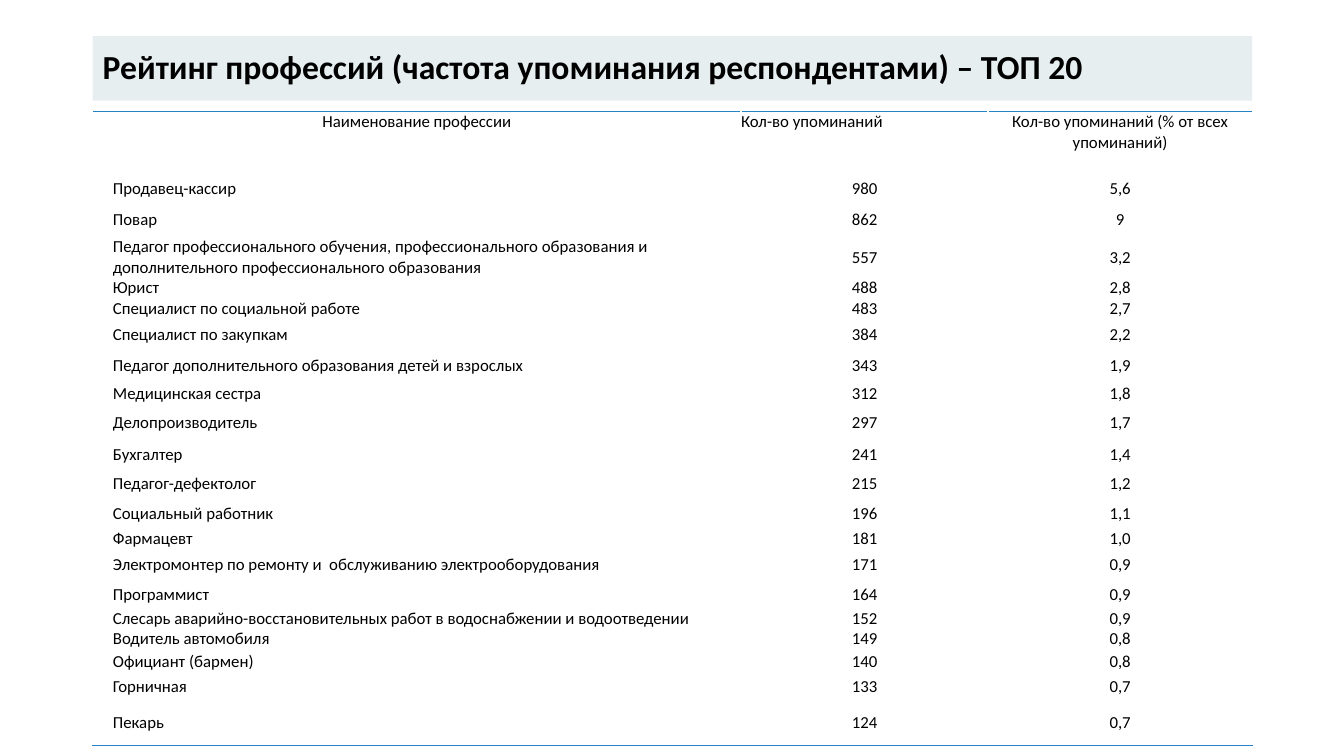
from lxml.etree import SubElement
from pptx import Presentation
from pptx.dml.color import RGBColor
from pptx.enum.shapes import MSO_SHAPE
from pptx.enum.text import MSO_ANCHOR, PP_ALIGN
from pptx.oxml.ns import qn
from pptx.util import Inches, Pt

HEADERS = ("Наименование профессии", "Кол-во упоминаний",
           "Кол-во упоминаний (% от всех упоминаний)")
HEADER_ALIGNS = (PP_ALIGN.CENTER, PP_ALIGN.LEFT, PP_ALIGN.CENTER)
BODY_ALIGNS = (PP_ALIGN.LEFT, PP_ALIGN.CENTER, PP_ALIGN.CENTER)
COL_WIDTHS = (6.43, 2.45, 2.62)
HEADER_HEIGHT = 0.61
PROFESSIONS = (
    ("Продавец-кассир", "980", "5,6", 0.3),
    ("Повар", "862", "9", 0.33),
    ("Педагог профессионального обучения, профессионального образования и "
     "дополнительного профессионального образования", "557", "3,2", 0.4),
    ("Юрист", "488", "2,8", 0.2),
    ("Специалист по социальной работе", "483", "2,7", 0.2),
    ("Специалист по закупкам", "384", "2,2", 0.32),
    ("Педагог дополнительного образования детей и взрослых", "343", "1,9", 0.29),
    ("Медицинская сестра", "312", "1,8", 0.26),
    ("Делопроизводитель", "297", "1,7", 0.33),
    ("Бухгалтер", "241", "1,4", 0.29),
    ("Педагог-дефектолог", "215", "1,2", 0.3),
    ("Социальный работник", "196", "1,1", 0.29),
    ("Фармацевт", "181", "1,0", 0.2),
    ("Электромонтер по ремонту и  обслуживанию электрооборудования", "171", "0,9", 0.32),
    ("Программист", "164", "0,9", 0.27),
    ("Слесарь аварийно-восстановительных работ в водоснабжении и водоотведении",
     "152", "0,9", 0.2),
    ("Водитель автомобиля", "149", "0,8", 0.2),
    ("Официант (бармен)", "140", "0,8", 0.25),
    ("Горничная", "133", "0,7", 0.25),
    ("Пекарь", "124", "0,7", 0.45),
)


def color(value):
    """Turn a hex string into a colour."""
    return RGBColor.from_string(value)


def apply(target, formats):
    """Set each attribute of the target from a dict."""
    for name, value in formats.items():
        setattr(target, name, value)


def write(tf, text, size, bold=False, **formats):
    """Write one formatted paragraph into a text frame."""
    p = tf.paragraphs[0]
    apply(p, formats)
    r = p.add_run()
    r.text = text
    apply(r.font, {"name": "Calibri", "size": Pt(size), "bold": bold})
    r.font.color.rgb = color("000000")


def add_border(cell, side, value):
    """Draw a one-point rule on one side of a cell."""
    tc_pr = cell._tc.get_or_add_tcPr()
    ln = SubElement(tc_pr, qn(f"a:{side}"), w=str(Pt(1)))
    fill = SubElement(ln, qn("a:solidFill"))
    SubElement(fill, qn("a:srgbClr"), val=value)
    tc_pr.insert(0, ln)


def add_title(slide, left, top, width, height):
    """Add the shaded title band."""
    sp = slide.shapes.add_shape(MSO_SHAPE.RECTANGLE, Inches(left), Inches(top),
                                Inches(width), Inches(height))
    sp.shadow.inherit = False
    sp.fill.solid()
    sp.fill.fore_color.rgb = color("E6EEF0")
    sp.line.fill.background()
    tf = sp.text_frame
    apply(tf, {"word_wrap": True, "vertical_anchor": MSO_ANCHOR.MIDDLE})
    write(tf, "Рейтинг профессий (частота упоминания респондентами) – ТОП 20", 24,
          bold=True, alignment=PP_ALIGN.LEFT, line_spacing=0.9)


def add_rating(slide, left, top, width):
    """Add the table of professions, ruled above and below."""
    heights = [HEADER_HEIGHT] + [row[-1] for row in PROFESSIONS]
    texts = [HEADERS] + [row[:-1] for row in PROFESSIONS]
    table = slide.shapes.add_table(len(texts), len(HEADERS), Inches(left), Inches(top),
                                   Inches(width), Inches(sum(heights))).table
    apply(table, {"first_row": False, "horz_banding": False})
    for column, col_width in zip(table.columns, COL_WIDTHS):
        column.width = Inches(col_width)
    for i, (row, height, values) in enumerate(zip(table.rows, heights, texts)):
        row.height = Inches(height)
        aligns = BODY_ALIGNS if i else HEADER_ALIGNS
        for j, (cell, text) in enumerate(zip(row.cells, values)):
            apply(cell, {"margin_left": Inches(0.2 if i and j == 0 else 0),
                         "margin_right": 0, "margin_top": 0, "margin_bottom": 0,
                         "vertical_anchor": MSO_ANCHOR.MIDDLE if i else MSO_ANCHOR.TOP})
            cell.fill.background()
            write(cell.text_frame, text, 12, alignment=aligns[j])
            if i == 0:
                add_border(cell, "lnT", "2683C6")
            elif i == len(PROFESSIONS):
                add_border(cell, "lnB", "2683C6")


def main():
    """Build and save the slide."""
    prs = Presentation()
    apply(prs, {"slide_width": Inches(13.33), "slide_height": Inches(7.5)})
    slide = prs.slides.add_slide(prs.slide_layouts[6])
    left, width = 0.92, sum(COL_WIDTHS)
    add_title(slide, left, 0.36, width, 0.64)
    add_rating(slide, left, 1.11, width)
    prs.save("out.pptx")


if __name__ == "__main__":
    main()
